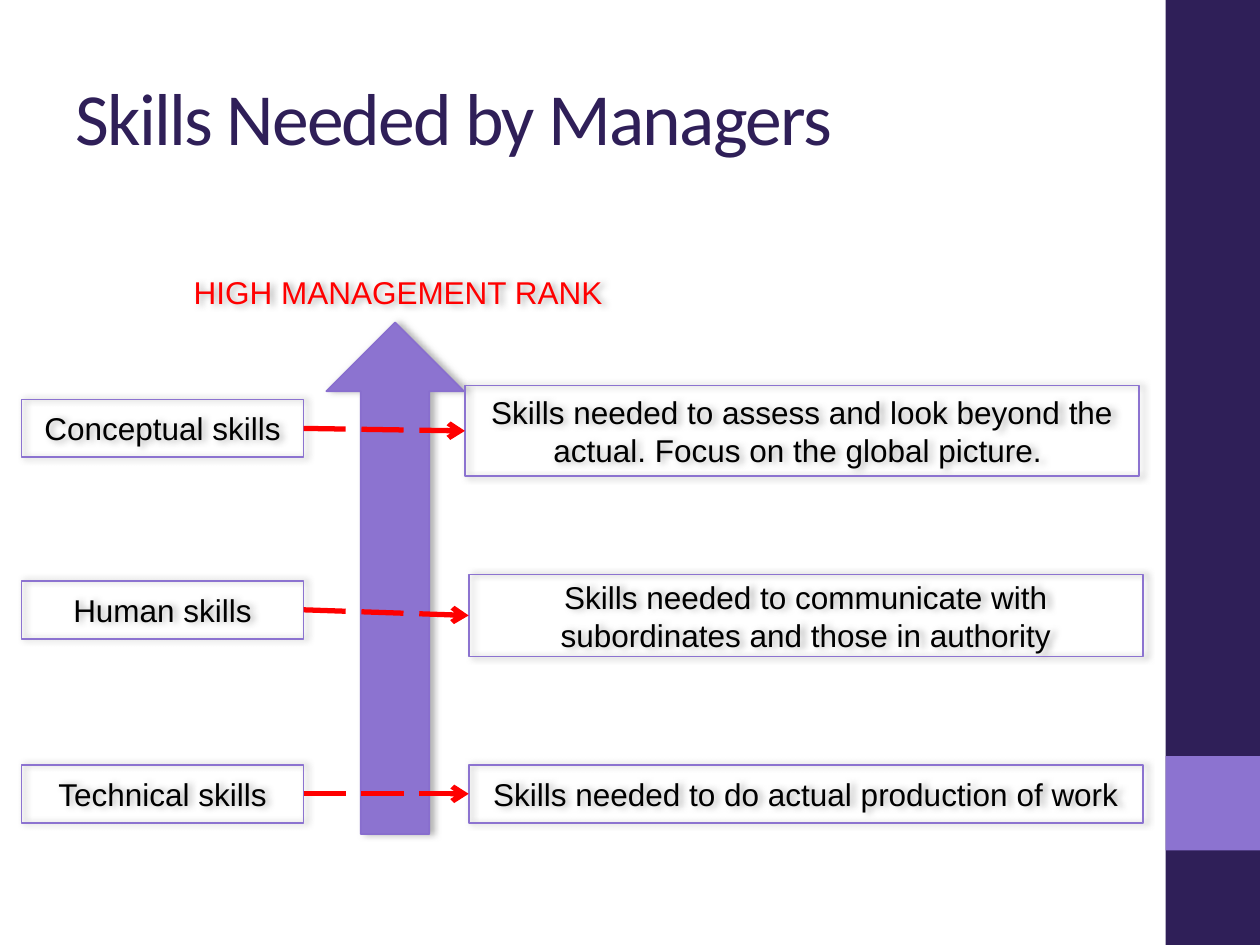
from lxml import etree
from pptx import Presentation
from pptx.dml.color import RGBColor
from pptx.enum import dml, shapes, text
from pptx.oxml import ns
from pptx.util import Inches, Pt

DARK, LILAC, EDGE = "2F1F58", "8C73D0", "886ECE"
RED, BLACK, GREY = "FF0000", "000000", "808080"

TITLE = "Skills Needed by Managers"
HEADING = "HIGH MANAGEMENT RANK"
# skill, top of its box, meaning, (left, top, height) of the meaning box
SKILLS = [
    ("Conceptual skills", 3.17,
     "Skills needed to assess and look beyond the actual. Focus on the global picture. ",
     (3.69, 3.06, 0.72)),
    ("Human skills", 4.61,
     "Skills needed to communicate with subordinates and those in authority",
     (3.72, 4.56, 0.65)),
    ("Technical skills", 6.07,
     "Skills needed to do actual production of work",
     (3.72, 6.07, 0.46)),
]
SKILL_LEFT, SKILL_W, SKILL_H, MEANING_W = 0.17, 2.24, 0.46, 5.35


def rgb(color):
    return RGBColor.from_string(color)


def add_xml(parent, tag, **attrs):
    return etree.SubElement(parent, ns.qn(tag), attrs)


def add_shadow(sp):
    effects = add_xml(sp._element.spPr, "a:effectLst")
    shadow = add_xml(effects, "a:outerShdw", blurRad=str(Pt(4)), dist=str(Pt(2)),
                     dir="0", algn="ctr", rotWithShape="0")
    color = add_xml(shadow, "a:srgbClr", val=GREY)
    add_xml(color, "a:alpha", val="60000")


def add_shape(s, kind, box, fill=None, line=None):
    sp = s.shapes.add_shape(kind, *map(Inches, box))
    if fill:
        sp.fill.solid()
        sp.fill.fore_color.rgb = rgb(fill)
    else:
        sp.fill.background()
    if line:
        sp.line.color.rgb = rgb(line)
        sp.line.width = Pt(1)
        add_shadow(sp)
    else:
        sp.line.fill.background()
        sp.shadow.inherit = False
    return sp


def set_text(sp, words, size, font, color, align):
    tf = sp.text_frame
    tf.text = words
    tf.word_wrap = True
    tf.auto_size = text.MSO_AUTO_SIZE.NONE
    tf.vertical_anchor = text.MSO_ANCHOR.MIDDLE
    p = tf.paragraphs[0]
    p.alignment = align
    r = p.runs[0]
    r.font.size, r.font.name = Pt(size), font
    r.font.color.rgb = rgb(color)
    return r


def add_label(s, words, box):
    sp = add_shape(s, shapes.MSO_SHAPE.RECTANGLE, box, line=LILAC)
    set_text(sp, words, 18, "Arial", BLACK, text.PP_ALIGN.CENTER)


def add_arrow(s, x1, y1, x2, y2):
    c = s.shapes.add_connector(shapes.MSO_CONNECTOR.STRAIGHT,
                               *map(Inches, (x1, y1, x2, y2)))
    c.line.color.rgb = rgb(RED)
    c.line.width = Pt(3)
    c.line.dash_style = dml.MSO_LINE.LONG_DASH
    add_xml(c.line._get_or_add_ln(), "a:tailEnd", type="arrow")
    add_xml(c._element.spPr, "a:effectLst")


def main():
    prs = Presentation()
    prs.slide_width, prs.slide_height = Inches(10), Inches(7.5)
    s = prs.slides.add_slide(prs.slide_layouts[5])

    # Side band
    add_shape(s, shapes.MSO_SHAPE.RECTANGLE, (9.25, 0, 0.75, 7.5), DARK)
    add_shape(s, shapes.MSO_SHAPE.RECTANGLE, (9.25, 6, 0.75, 0.75), LILAC)

    # Title
    title = s.shapes.title
    title.left, title.top, title.width, title.height = map(Inches, (0.5, 0.3, 9.28, 1.25))
    r = set_text(title, TITLE, 42, "Calibri", DARK, text.PP_ALIGN.LEFT)
    r.font._element.set("spc", "-100")

    # Rank arrow and its heading
    add_shape(s, shapes.MSO_SHAPE.UP_ARROW, (2.59, 2.56, 1.09, 4.06), LILAC, EDGE)
    heading = s.shapes.add_textbox(*map(Inches, (1.07, 2.09, 4.18, 0.46)))
    set_text(heading, HEADING, 18, "Arial", RED, text.PP_ALIGN.CENTER)
    add_shadow(heading)

    # Skills, each joined to its meaning
    for skill, top, meaning, (left, meaning_top, height) in SKILLS:
        add_label(s, skill, (SKILL_LEFT, top, SKILL_W, SKILL_H))
        add_label(s, meaning, (left, meaning_top, MEANING_W, height))
        add_arrow(s, SKILL_LEFT + SKILL_W, top + SKILL_H / 2,
                  left, meaning_top + height / 2)

    prs.save("out.pptx")


if __name__ == "__main__":
    main()
